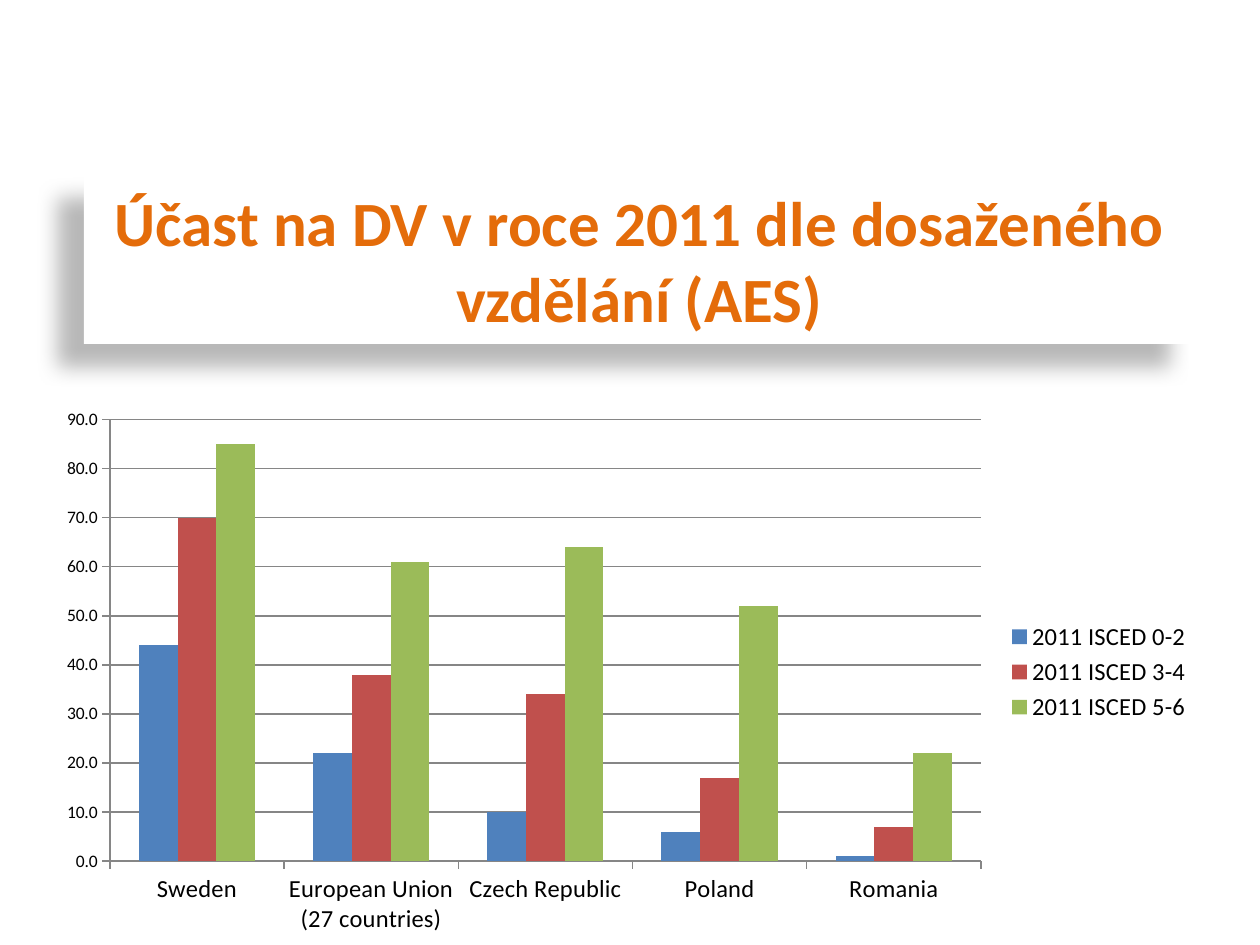
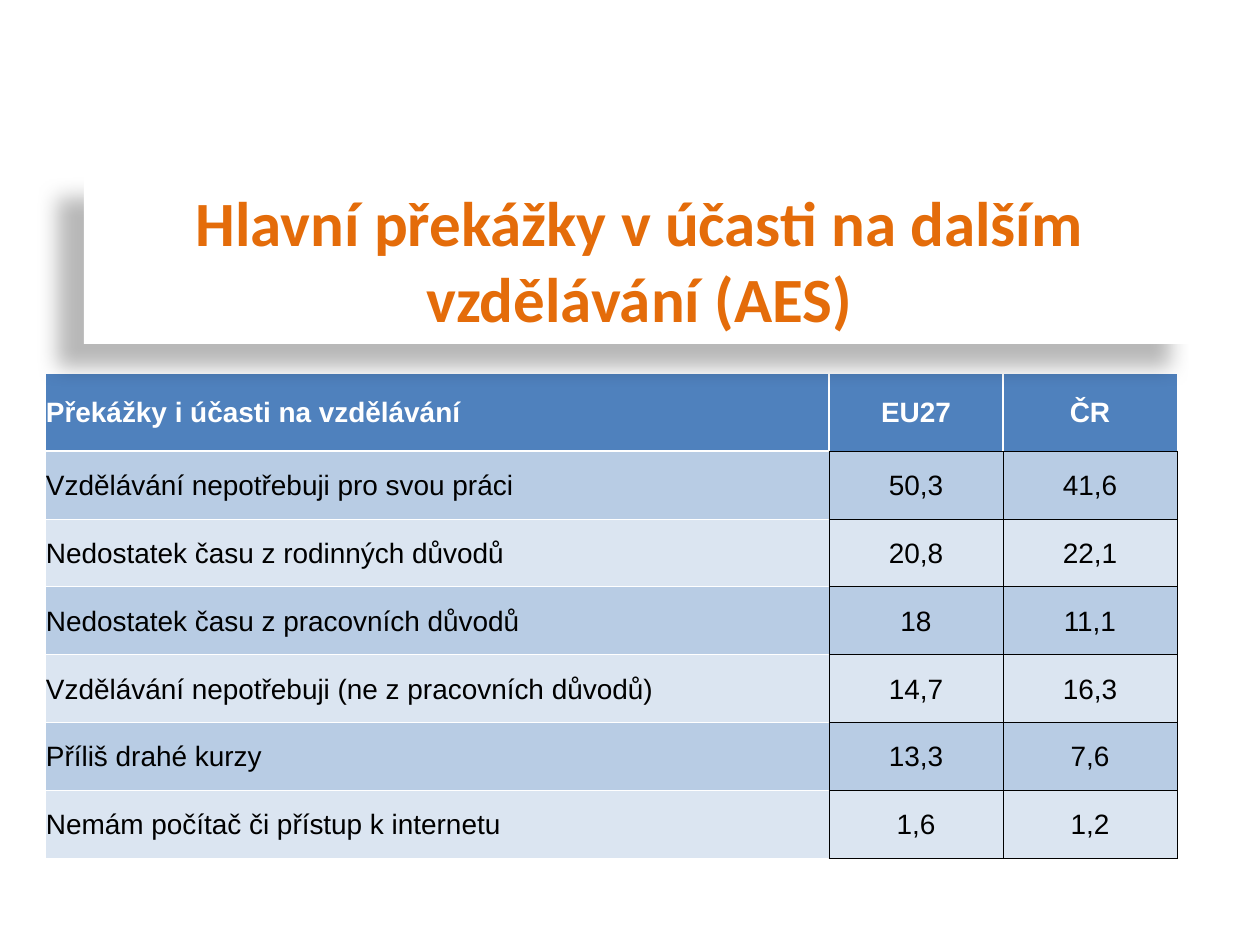
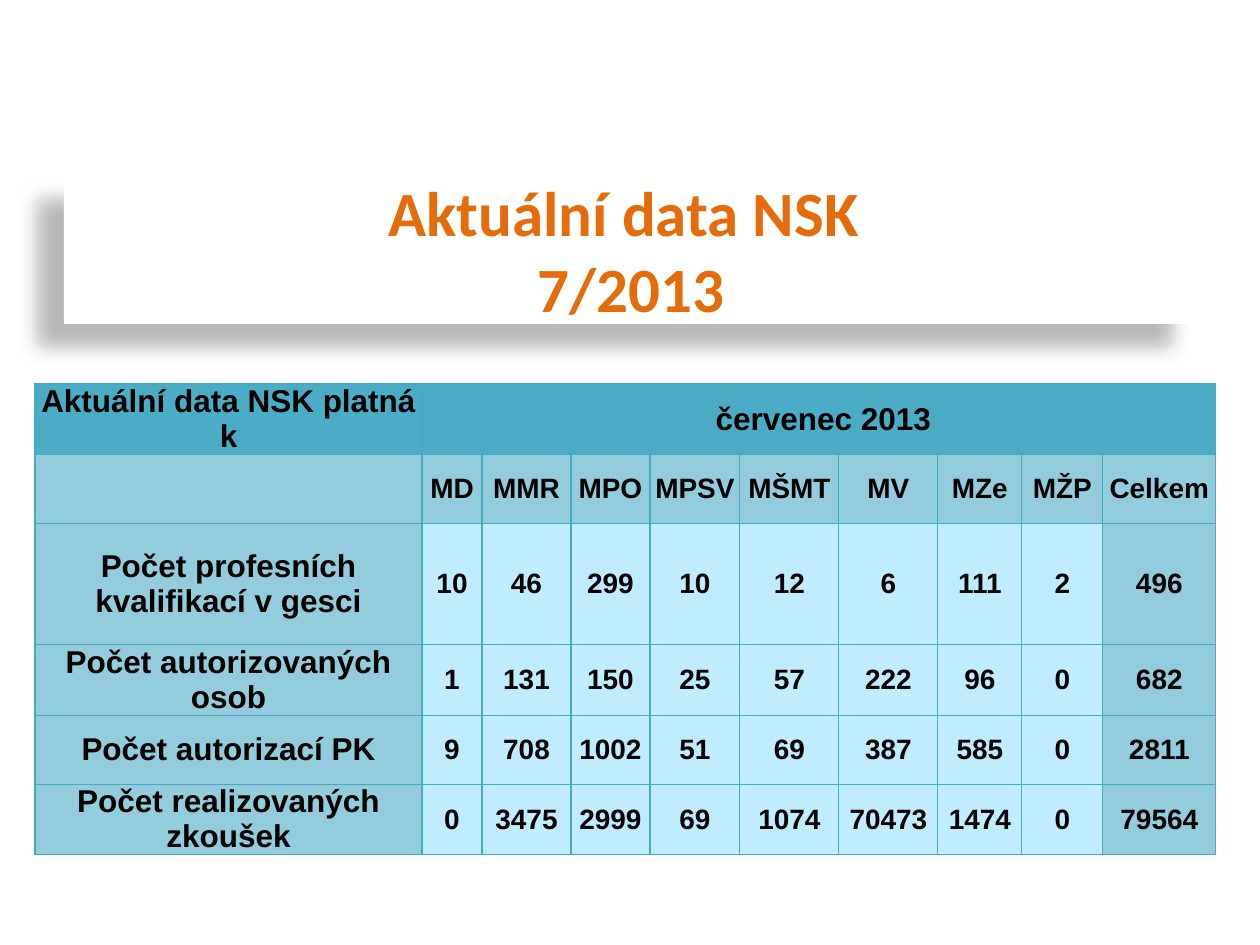
from lxml.etree import SubElement
from pptx import Presentation
from pptx.chart.data import CategoryChartData
from pptx.dml.color import RGBColor
from pptx.enum.chart import XL_CHART_TYPE, XL_LEGEND_POSITION, XL_TICK_MARK
from pptx.enum.text import MSO_ANCHOR, MSO_AUTO_SIZE, PP_ALIGN
from pptx.oxml.ns import qn
from pptx.util import Inches, Pt

PX = 7257
COLORS = {
    "white": "FFFFFF",
    "black": "000000",
    "title": "E46C0A",
    "title_outline": "984807",
    "grid": "868686",
    "blue": "4F81BD",
    "red": "C0504D",
    "green": "9BBB59",
    "blue_band": "B8CCE4",
    "blue_light": "DBE5F1",
    "teal": "4BACC6",
    "teal_band": "93CDDD",
    "teal_light": "C0ECFF",
    "teal_line": "46AAC5",
}
RGB = {name: RGBColor.from_string(value) for name, value in COLORS.items()}

presentation = Presentation()
presentation.slide_width = Inches(10)
presentation.slide_height = Inches(7.5)


def add_titled_slide(text, left, top, width, height):
    slide = presentation.slides.add_slide(presentation.slide_layouts[5])
    title = slide.shapes.title
    title.left, title.top, title.width, title.height = left * PX, top * PX, width * PX, height * PX
    title.fill.solid()
    title.fill.fore_color.rgb = RGB["white"]
    title.shadow.inherit = False
    effects = title._element.spPr.find(qn("a:effectLst"))
    shadow = SubElement(effects, qn("a:outerShdw"), blurRad=str(Pt(11.8)), dist=str(Pt(19.7)),
                        dir=str(141 * 60000), algn="ctr", rotWithShape="0")
    shadow_color = SubElement(shadow, qn("a:srgbClr"), val=COLORS["black"])
    SubElement(shadow_color, qn("a:alpha"), val="28000")
    frame = title.text_frame
    frame.text = text
    frame.word_wrap = True
    frame.auto_size = MSO_AUTO_SIZE.NONE
    frame.vertical_anchor = MSO_ANCHOR.MIDDLE
    for paragraph in frame.paragraphs:
        paragraph.alignment = PP_ALIGN.CENTER
        for run in paragraph.runs:
            run.font.name = "Calibri"
            run.font.size = Pt(36)
            run.font.bold = True
            run.font.color.rgb = RGB["title"]
            properties = run._r.get_or_add_rPr()
            outline = SubElement(properties, qn("a:ln"), w=str(Pt(1)))
            properties.insert(0, outline)
            outline_fill = SubElement(outline, qn("a:solidFill"))
            SubElement(outline_fill, qn("a:srgbClr"), val=COLORS["title_outline"])
    return slide


def format_cell(cell, text, fill, borders, margin, size=16, bold=True, color="black", align=PP_ALIGN.CENTER):
    cell.text = text
    cell.vertical_anchor = MSO_ANCHOR.MIDDLE
    cell.margin_left = cell.margin_right = cell.margin_top = margin
    cell.margin_bottom = 0
    properties = cell._tc.get_or_add_tcPr()
    for side, (line_color, line_width) in borders.items():
        line = SubElement(properties, qn("a:ln" + side), w=str(Pt(line_width)))
        line_fill = SubElement(line, qn("a:solidFill"))
        SubElement(line_fill, qn("a:srgbClr"), val=COLORS[line_color])
    cell.fill.solid()
    cell.fill.fore_color.rgb = RGB[fill]
    paragraph = cell.text_frame.paragraphs[0]
    paragraph.alignment = align
    for run in paragraph.runs:
        run.font.name = "Arial"
        run.font.size = Pt(size)
        run.font.bold = bold
        run.font.color.rgb = RGB[color]


slide = add_titled_slide("Účast na DV v roce 2011 dle dosaženého vzdělání (AES)", 84, 175, 1111, 169)
chart_data = CategoryChartData(number_format="#,##0.0")
chart_data.categories = ["Sweden", "European Union (27 countries)", "Czech Republic", "Poland", "Romania"]
chart_data.add_series("2011 ISCED 0-2", [44, 22, 10, 6, 1])
chart_data.add_series("2011 ISCED 3-4", [70, 38, 34, 17, 7])
chart_data.add_series("2011 ISCED 5-6", [85, 61, 64, 52, 22])
chart = slide.shapes.add_chart(XL_CHART_TYPE.COLUMN_CLUSTERED, 44 * PX, 399 * PX,
                               1160 * PX, 546 * PX, chart_data).chart
chart.has_title = False
chart.font.name = "Calibri"
chart.font.size = Pt(10)
chart.font.color.rgb = RGB["black"]
chart.has_legend = True
chart.legend.position = XL_LEGEND_POSITION.RIGHT
chart.legend.include_in_layout = False
chart.legend.font.size = Pt(14)
plot = chart.plots[0]
plot.gap_width = 150
plot.overlap = 0
plot.vary_by_categories = False
for series, color in zip(plot.series, ["blue", "red", "green"]):
    series.format.fill.solid()
    series.format.fill.fore_color.rgb = RGB[color]
for axis in (chart.category_axis, chart.value_axis):
    axis.major_tick_mark = XL_TICK_MARK.OUTSIDE
    axis.format.line.color.rgb = RGB["grid"]
    axis.format.line.width = Pt(0.75)
chart.category_axis.tick_labels.font.size = Pt(14)
value_axis = chart.value_axis
value_axis.minimum_scale = 0
value_axis.maximum_scale = 90
value_axis.major_unit = 10
value_axis.tick_labels.number_format = "#,##0.0"
value_axis.tick_labels.number_format_is_linked = False
value_axis.has_major_gridlines = True
value_axis.major_gridlines.format.line.color.rgb = RGB["grid"]
value_axis.major_gridlines.format.line.width = Pt(0.75)

slide = add_titled_slide("Hlavní překážky v účasti na dalším vzdělávání (AES)", 84, 175, 1111, 169)
barrier_rows = [
    ["Překážky i účasti na vzdělávání", "EU27", "ČR"],
    ["Vzdělávání nepotřebuji pro svou práci", "50,3", "41,6"],
    ["Nedostatek času z rodinných důvodů", "20,8", "22,1"],
    ["Nedostatek času z pracovních důvodů", "18", "11,1"],
    ["Vzdělávání nepotřebuji (ne z pracovních důvodů)", "14,7", "16,3"],
    ["Příliš drahé kurzy", "13,3", "7,6"],
    ["Nemám počítač či přístup k internetu", "1,6", "1,2"],
]
table_shape = slide.shapes.add_table(7, 3, 45 * PX, 373 * PX, 1132 * PX, 486 * PX)
slide.shapes._spTree.append(slide.shapes.title._element)
table = table_shape.table
for column, width in zip(table.columns, [784, 174, 174]):
    column.width = width * PX
thin_white, thick_white, thin_black = ("white", 0.5), ("white", 1.5), ("black", 0.5)
for row_index, values in enumerate(barrier_rows):
    header = row_index == 0
    table.rows[row_index].height = (78 if header else 68) * PX
    fill = "blue" if header else ["blue_light", "blue_band"][row_index % 2]
    for column_index, value in enumerate(values):
        label = column_index == 0
        if header:
            borders = {"R": thin_white, "B": thick_white if label else thin_black}
        elif label:
            borders = {"R": thin_black, "T": thick_white if row_index == 1 else thin_white, "B": thin_white}
        else:
            borders = dict.fromkeys("LRTB", thin_black)
        format_cell(table.cell(row_index, column_index), value, fill, borders, PX, bold=header,
                    color="white" if header else "black",
                    align=PP_ALIGN.LEFT if label else PP_ALIGN.CENTER)

slide = add_titled_slide("Aktuální data NSK \n7/2013", 64, 175, 1134, 149)
qualification_rows = [
    ["Aktuální data NSK platná k", " červenec 2013"] + [""] * 8,
    ["", "MD", "MMR", "MPO", "MPSV", "MŠMT", "MV", "MZe", "MŽP", "Celkem"],
    ["Počet profesních kvalifikací v gesci", "10", "46", "299", "10", "12", "6", "111", "2", "496"],
    ["Počet autorizovaných osob", "1", "131", "150", "25", "57", "222", "96", "0", "682"],
    ["Počet autorizací PK", "9", "708", "1002", "51", "69", "387", "585", "0", "2811"],
    ["Počet realizovaných zkoušek", "0", "3475", "2999", "69", "1074", "70473", "1474", "0", "79564"],
]
table = slide.shapes.add_table(6, 10, 35 * PX, 384 * PX, 1181 * PX, 466 * PX).table
for column, width in zip(table.columns, [387, 60, 89, 79, 90, 99, 99, 84, 81, 113]):
    column.width = width * PX
for row, height in zip(table.rows, [69, 69, 121, 69, 69, 69]):
    row.height = height * PX
table.cell(0, 1).merge(table.cell(0, 9))
teal_borders = dict.fromkeys("LRTB", ("teal_line", 0.75))
for row_index, values in enumerate(qualification_rows):
    for column_index, value in enumerate(values):
        if row_index == 0:
            fill = "teal"
        elif row_index == 1 or column_index in (0, 9):
            fill = "teal_band"
        else:
            fill = "teal_light"
        size = 18 if row_index == 0 or column_index == 0 else 16
        format_cell(table.cell(row_index, column_index), value, fill, teal_borders, 0, size=size)

presentation.save("out.pptx")
